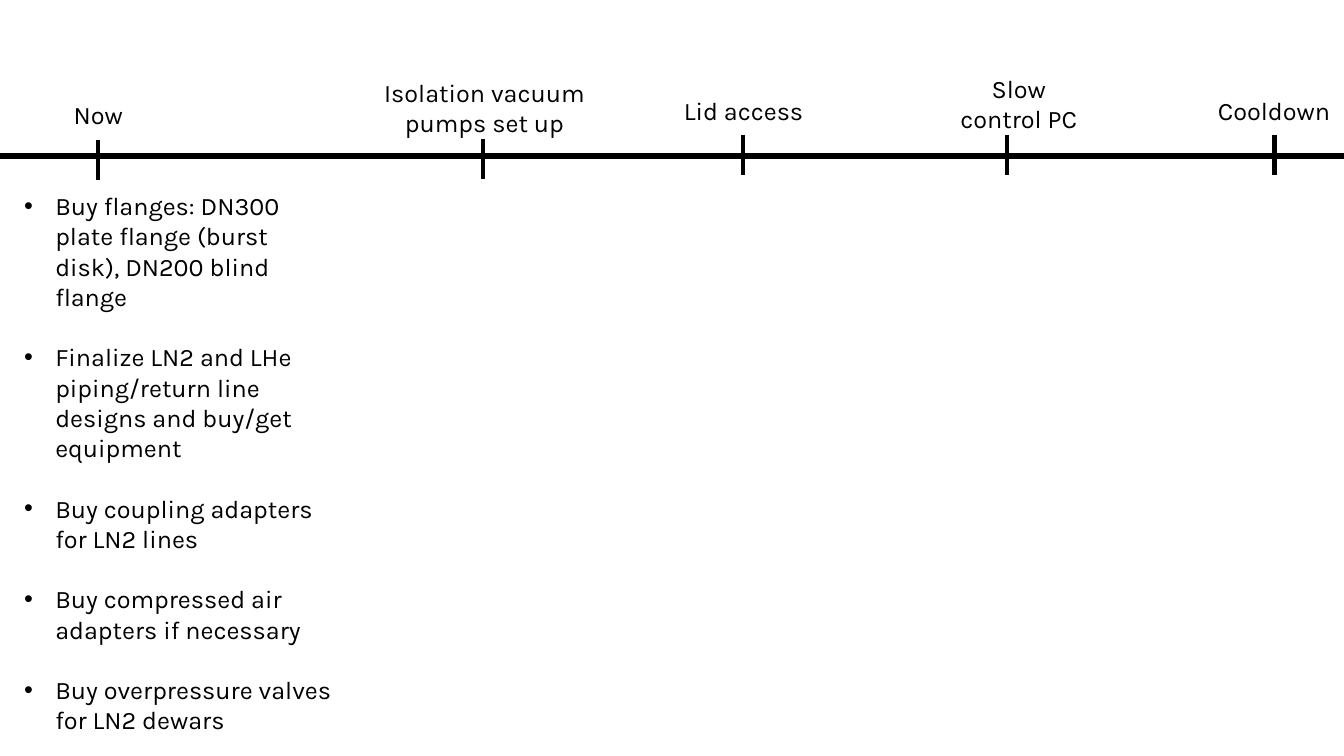
"""Build a timeline slide with five milestones and a list of tasks to do now."""
from lxml import etree
from pptx import Presentation
from pptx.dml.color import RGBColor
from pptx.enum.shapes import MSO_CONNECTOR
from pptx.enum.text import MSO_AUTO_SIZE, PP_ALIGN
from pptx.oxml.ns import qn
from pptx.util import Inches, Pt

BLACK = RGBColor(0, 0, 0)
FONT = "Karla"
INDENT = Inches(0.31)

MILESTONES = [
    ("Now", 0.97, 1.39, (0.56, 0.94, 0.83, 0.4)),
    ("Isolation vacuum pumps set up", 4.79, 1.38, (3.63, 0.72, 2.35, 0.71)),
    ("Lid access", 7.37, 1.34, (6.67, 0.9, 1.41, 0.4)),
    ("Slow control PC", 9.99, 1.34, (9.4, 0.68, 1.41, 0.71)),
    ("Cooldown", 12.64, 1.34, (11.93, 0.9, 1.41, 0.4)),
]
TASKS = [
    "Buy flanges: DN300 plate flange (burst disk), DN200 blind flange",
    "Finalize LN2 and LHe piping/return line designs and buy/get equipment",
    "Buy coupling adapters for LN2 lines",
    "Buy compressed air adapters if necessary",
    "Buy overpressure valves for LN2 dewars",
]

prs = Presentation()
prs.slide_width, prs.slide_height = Inches(13.33), Inches(7.5)
s = prs.slides.add_slide(prs.slide_layouts[6])


def add_line(x1, y1, x2, y2, width):
    line = s.shapes.add_connector(
        MSO_CONNECTOR.STRAIGHT, Inches(x1), Inches(y1), Inches(x2), Inches(y2))
    line.line.color.rgb = BLACK
    line.line.width = Pt(width)
    etree.SubElement(line._element.spPr, qn("a:effectLst"))


def add_text(paragraphs, box, align=PP_ALIGN.LEFT, bullet=None, gap=0):
    tf = s.shapes.add_textbox(*[Inches(v) for v in box]).text_frame
    tf.word_wrap = True
    tf.auto_size = MSO_AUTO_SIZE.SHAPE_TO_FIT_TEXT
    for i, text in enumerate(paragraphs):
        p = tf.add_paragraph() if i else tf.paragraphs[0]
        p.alignment = align
        p.space_before = Pt(gap if i else 0)
        r = p.add_run()
        r.text = text
        r.font.name, r.font.size = FONT, Pt(18)
        r.font.color.rgb = BLACK
        if bullet:
            pPr = p._p.get_or_add_pPr()
            pPr.set("marL", str(INDENT))
            pPr.set("indent", str(-INDENT))
            etree.SubElement(pPr, qn("a:buFont"), typeface="Arial")
            etree.SubElement(pPr, qn("a:buChar"), char=bullet)


add_line(0, 1.55, 13.33, 1.55, 4.5)
for label, x, top, box in MILESTONES:
    add_line(x, top, x, top + 0.4, 3)
    add_text([label], box, align=PP_ALIGN.CENTER)
add_text(TASKS, (0.14, 1.84, 3.3, 4.95), bullet="•", gap=21.6)

prs.save("out.pptx")
